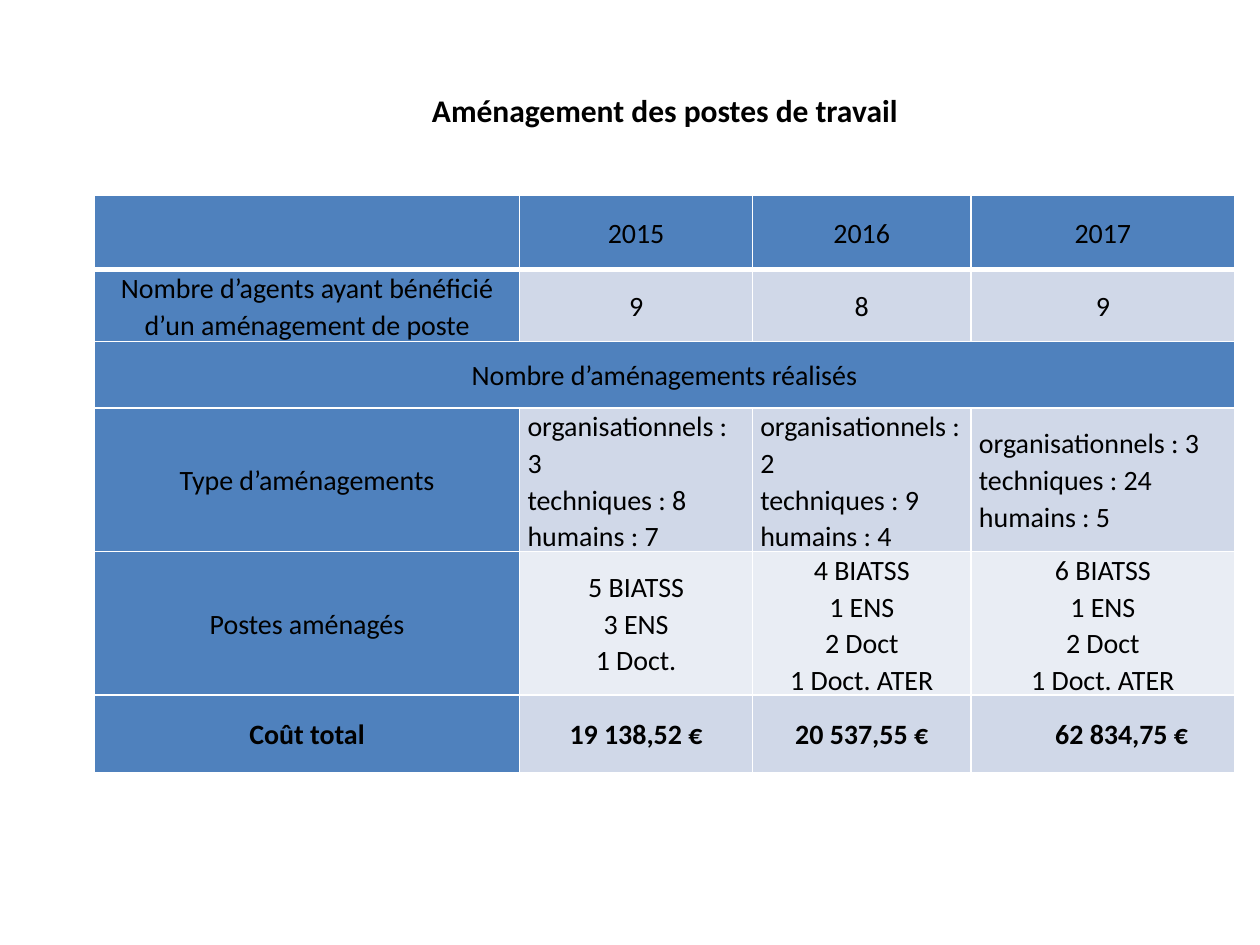
"""Build a slide with a table of workplace adjustments for 2015 to 2017."""
from dataclasses import dataclass
from typing import Any

import pptx
import pptx.dml.color
import pptx.enum.text
import pptx.oxml.ns
import pptx.util
from lxml import etree

Pt = pptx.util.Pt
Align = pptx.enum.text.PP_ALIGN
MIDDLE = pptx.enum.text.MSO_ANCHOR.MIDDLE
qn = pptx.oxml.ns.qn

COLOURS = {
    "text": "000000",
    "border": "FFFFFF",
    "heading": "4F81BD",
    "band": "D0D8E8",
    "light": "E9EDF4",
}
COLUMN_WIDTHS = (243, 133, 125, 150.5)
ADJUSTMENTS = ("organisationnels", "techniques", "humains")


@dataclass(frozen=True)
class Row:
    """One table row: its label, values, height and look."""

    label: str
    values: tuple[str, ...]
    height: float
    fill: str = "band"
    align: Any = Align.CENTER
    bold: bool = False
    bottom: float = 1
    last_indent: float = 0


def rgb(name: str) -> pptx.dml.color.RGBColor:
    """Return the named colour."""
    return pptx.dml.color.RGBColor.from_string(COLOURS[name])


def adjustment_lines(*counts: int) -> str:
    """Return one line for each type of adjustment."""
    return "\n".join(f"{kind} : {count}" for kind, count in zip(ADJUSTMENTS, counts))


def apply(target: Any, values: dict[str, Any]) -> None:
    """Set attributes of an object from a dict."""
    for name, value in values.items():
        setattr(target, name, value)


def write(frame: Any, text: str, size: float, bold: bool, align: Any, spacing: float) -> None:
    """Fill a text frame, one paragraph a line."""
    frame.text = text
    for para in frame.paragraphs:
        apply(para, {"alignment": align, "line_spacing": spacing})
        apply(para.font, {"name": "Calibri", "size": Pt(size), "bold": bold})
        para.font.color.rgb = rgb("text")


def draw_borders(cell: Any, bottom: float) -> None:
    """Give a cell its four borders, ahead of its fill."""
    properties = cell._tc.get_or_add_tcPr()
    widths = {"a:lnL": 1, "a:lnR": 1, "a:lnT": 1, "a:lnB": bottom}
    for position, (tag, width) in enumerate(widths.items()):
        line = etree.Element(qn(tag), w=str(Pt(width)))
        fill = etree.SubElement(line, qn("a:solidFill"))
        etree.SubElement(fill, qn("a:srgbClr"), val=COLOURS["border"])
        properties.insert(position, line)


def draw_cell(cell: Any, text: str, row: Row, fill: str, align: Any) -> None:
    """Format one table cell and write its text."""
    apply(cell, {
        "margin_left": Pt(4.5),
        "margin_right": Pt(4.5),
        "margin_top": Pt(0),
        "margin_bottom": Pt(0),
        "vertical_anchor": MIDDLE,
    })
    cell.fill.solid()
    cell.fill.fore_color.rgb = rgb(fill)
    draw_borders(cell, row.bottom)
    write(cell.text_frame, text, 16, row.bold, align, 1.07)


def draw_table(page: Any, rows: tuple[Row, ...]) -> None:
    """Draw the table; a row without values spans all columns."""
    box = page.shapes.add_table(
        len(rows), len(COLUMN_WIDTHS), Pt(54), Pt(111.5), Pt(sum(COLUMN_WIDTHS)), Pt(331)
    )
    table = box.table
    apply(table, {"first_row": False, "horz_banding": False})
    for column, width in zip(table.columns, COLUMN_WIDTHS):
        column.width = Pt(width)
    last = len(COLUMN_WIDTHS) - 1
    for index, row in enumerate(rows):
        table.rows[index].height = Pt(row.height)
        draw_cell(table.cell(index, 0), row.label, row, "heading", Align.CENTER)
        for column, value in enumerate(row.values, start=1):
            draw_cell(table.cell(index, column), value, row, row.fill, row.align)
        if not row.values:
            table.cell(index, 0).merge(table.cell(index, last))
        if row.last_indent:
            para = table.cell(index, last).text_frame.paragraphs[0]
            para._p.get_or_add_pPr().set("indent", str(Pt(row.last_indent)))
    box.height = Pt(331)


def draw_title(page: Any, text: str) -> None:
    """Draw the centred slide title."""
    box = page.shapes.add_textbox(Pt(184.5), Pt(37.5), Pt(391), Pt(51))
    apply(box.text_frame, {"word_wrap": True, "vertical_anchor": MIDDLE})
    write(box.text_frame, text, 18, True, Align.CENTER, 1.0)


ROWS = (
    Row("", ("2015", "2016", "2017"), 42.5, fill="heading", bottom=3),
    Row("Nombre d’agents ayant bénéficié d’un aménagement de poste", ("9", "8", "9"), 41),
    Row("Nombre d’aménagements réalisés", (), 38),
    Row(
        "Type d’aménagements",
        (adjustment_lines(3, 8, 7), adjustment_lines(2, 9, 4), adjustment_lines(3, 24, 5)),
        75.5,
        align=Align.LEFT,
    ),
    Row(
        "Postes aménagés",
        (
            "5 BIATSS\n3 ENS\n1 Doct.",
            "4 BIATSS\n1 ENS\n2 Doct\n1 Doct. ATER",
            "6 BIATSS\n1 ENS\n2 Doct\n1 Doct. ATER",
        ),
        69,
        fill="light",
    ),
    Row(
        "Coût total",
        ("19 138,52 €", "20 537,55 €", "62 834,75 €"),
        44.5,
        bold=True,
        last_indent=21.6,
    ),
)


def main() -> None:
    """Build and save the deck."""
    deck = pptx.Presentation()
    apply(deck, {"slide_width": Pt(720), "slide_height": Pt(540)})
    page = deck.slides.add_slide(deck.slide_layouts[6])
    draw_title(page, "Aménagement des postes de travail")
    draw_table(page, ROWS)
    deck.save("out.pptx")


if __name__ == "__main__":
    main()
